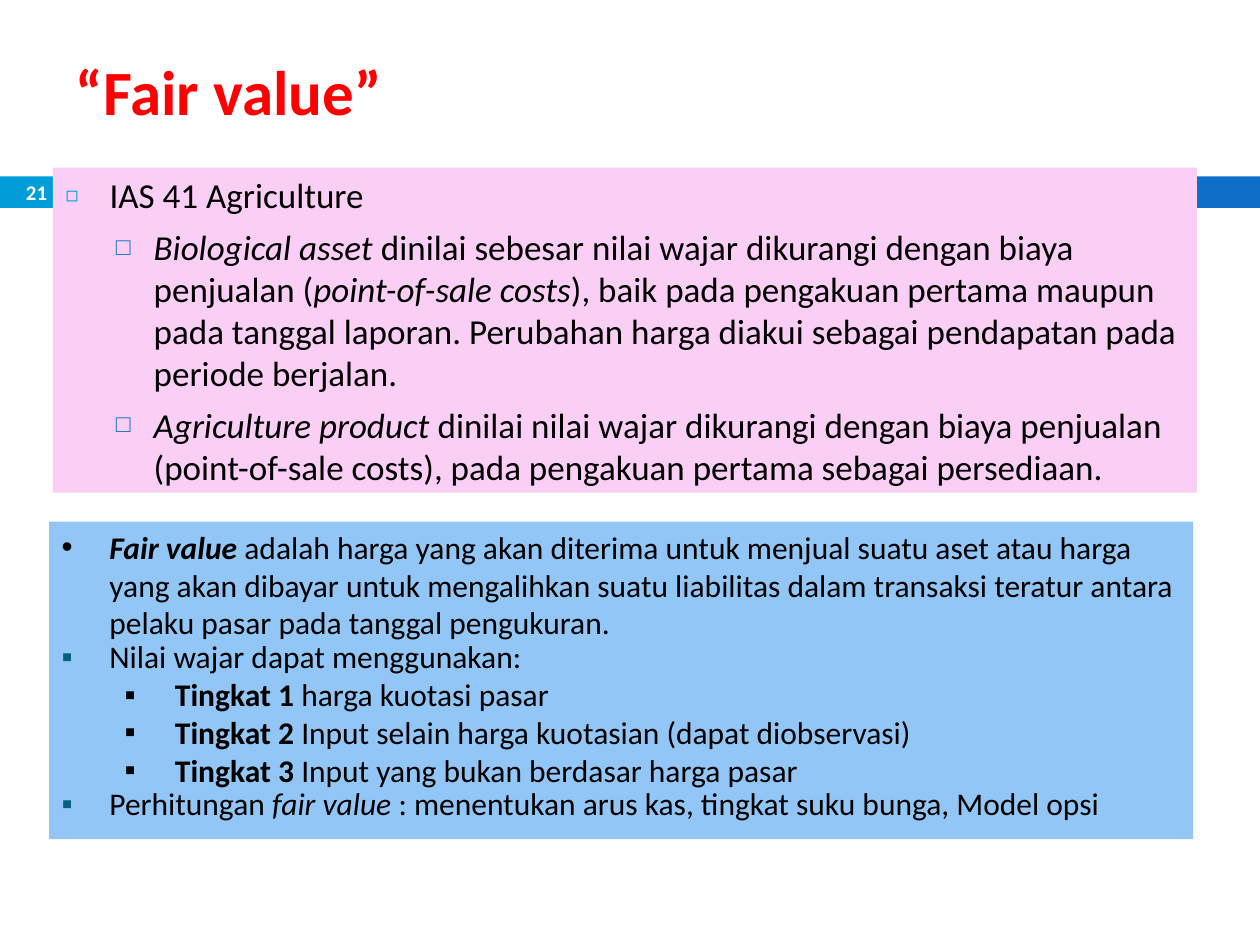
"""Build the fair value slide: title, band, and two bulleted panels."""
from lxml.etree import SubElement as Sub
from pptx import Presentation
from pptx.dml.color import RGBColor as RGB
from pptx.enum.shapes import MSO_SHAPE as Kind
from pptx.enum.text import MSO_ANCHOR as Anchor, MSO_AUTO_SIZE as Fit, PP_ALIGN as Align
from pptx.oxml.ns import qn
from pptx.util import Inches, Pt

WIDE, HIGH = 10, 7.5
FONT = "Calibri"

# Places are left, top, width, height in percent of the slide.
BARS = [((0, 18.67, 5.8, 3.33), "009DD9"), ((6.5, 18.67, 93.5, 3.33), "0F6FC6")]
HEAD = ("“Fair value”", (5, 5.6, 90, 8))
PAGE = ("21", (0, 18.53, 5.8, 3.6))
PINK = ((4.2, 17.73, 90.8, 34.4), "FACEF5")
BLUE = ((3.9, 55.2, 90.8, 33.6), "91C6F7")

STYLES = {
    "topic": dict(level=0, indent=0.35, hang=0.35, mark="◻", tint="009DD9", share=60),
    "detail": dict(level=1, indent=0.7, hang=0.3, mark="□", tint="0F6FC6", share=70, before=5.5),
    "lead": dict(level=0, indent=0.38, hang=0.38, mark="•"),
    "point": dict(level=0, indent=0.38, hang=0.38, mark="▪", tint="04617B", line=0.9),
    "tier": dict(level=2, indent=0.9, hang=0.4, mark="▪"),
}

RULES = [
    ("topic", [("IAS 41 Agriculture", "")]),
    ("detail", [
        ("Biological asset ", "i"),
        ("dinilai sebesar nilai wajar dikurangi dengan biaya penjualan (", ""),
        ("point-of-sale costs", "i"),
        ("), baik pada pengakuan pertama maupun pada tanggal laporan. "
         "Perubahan harga diakui sebagai pendapatan pada periode berjalan.", ""),
    ]),
    ("detail", [
        ("Agriculture product ", "i"),
        ("dinilai nilai wajar dikurangi dengan biaya penjualan "
         "(point-of-sale costs), pada pengakuan pertama sebagai persediaan.", ""),
    ]),
]
TIERS = [
    "harga kuotasi pasar",
    "Input selain harga kuotasian (dapat diobservasi)",
    "Input yang bukan berdasar harga pasar",
]
VALUES = [
    ("lead", [
        ("Fair value ", "bi"),
        ("adalah harga yang akan diterima untuk menjual suatu aset atau harga yang "
         "akan dibayar untuk mengalihkan suatu liabilitas dalam transaksi teratur "
         "antara pelaku pasar pada tanggal pengukuran.", ""),
    ]),
    ("point", [("Nilai wajar dapat menggunakan:", "")]),
    *[("tier", [(f"Tingkat {n} ", "b"), (text, "")]) for n, text in enumerate(TIERS, 1)],
    ("point", [
        ("Perhitungan ", ""),
        ("fair value ", "i"),
        (": menentukan arus kas, tingkat suku bunga, Model opsi", ""),
    ]),
]


def color(code):
    return RGB.from_string(code)


def box(place):
    sides = (WIDE, HIGH, WIDE, HIGH)
    return [Inches(part * side / 100) for part, side in zip(place, sides)]


def move(shape, place):
    for name, size in zip(("left", "top", "width", "height"), box(place)):
        setattr(shape, name, size)


def paint(shape, code):
    shape.fill.solid()
    shape.fill.fore_color.rgb = color(code)
    shape.line.fill.background()


def rect(slide, place, code):
    shape = slide.shapes.add_shape(Kind.RECTANGLE, *box(place))
    shape.shadow.inherit = False
    paint(shape, code)
    return shape


def setup(shape, anchor):
    frame = shape.text_frame
    form = dict(word_wrap=True, auto_size=Fit.NONE, vertical_anchor=anchor)
    for name, value in form.items():
        setattr(frame, name, value)
    return frame


def write(para, text, size, code="000000", bold=False, italic=False):
    run = para.add_run()
    run.text = text
    form = dict(name=FONT, size=Pt(size), bold=bold, italic=italic)
    for name, value in form.items():
        setattr(run.font, name, value)
    run.font.color.rgb = color(code)


def bullet(para, style):
    props = para._p.get_or_add_pPr()
    props.set("marL", str(Inches(style["indent"])))
    props.set("indent", str(-Inches(style["hang"])))
    tint = Sub(props, qn("a:buClr"))
    Sub(tint, qn("a:srgbClr"), val=style.get("tint", "000000"))
    Sub(props, qn("a:buSzPct"), val=str(style.get("share", 100) * 1000))
    Sub(props, qn("a:buFont"), typeface="Arial")
    Sub(props, qn("a:buChar"), char=style["mark"])


def panel(shape, items, size):
    frame = setup(shape, Anchor.TOP)
    for n, (kind, runs) in enumerate(items):
        para = frame.add_paragraph() if n else frame.paragraphs[0]
        style = STYLES[kind]
        bullet(para, style)
        form = dict(level=style["level"], alignment=Align.LEFT, space_after=Pt(0),
                    space_before=Pt(style.get("before", 0)),
                    line_spacing=style.get("line", 1.0))
        for name, value in form.items():
            setattr(para, name, value)
        for text, look in runs:
            write(para, text, size, bold="b" in look, italic="i" in look)


def label(shape, text, size, code, align):
    para = setup(shape, Anchor.MIDDLE).paragraphs[0]
    para.alignment = align
    write(para, text, size, code, bold=True)


def main():
    deck = Presentation()
    deck.slide_width, deck.slide_height = Inches(WIDE), Inches(HIGH)
    slide = deck.slides.add_slide(deck.slide_layouts[1])
    title, body = slide.placeholders
    for place, code in BARS:
        title._element.addprevious(rect(slide, place, code)._element)

    text, place = HEAD
    move(title, place)
    label(title, text, 36, "FF0000", Align.LEFT)

    place, code = PINK
    move(body, place)
    paint(body, code)
    panel(body, RULES, 20)

    text, place = PAGE
    label(slide.shapes.add_textbox(*box(place)), text, 11.9, "FFFFFF", Align.CENTER)
    panel(rect(slide, *BLUE), VALUES, 18)
    deck.save("out.pptx")


if __name__ == "__main__":
    main()
